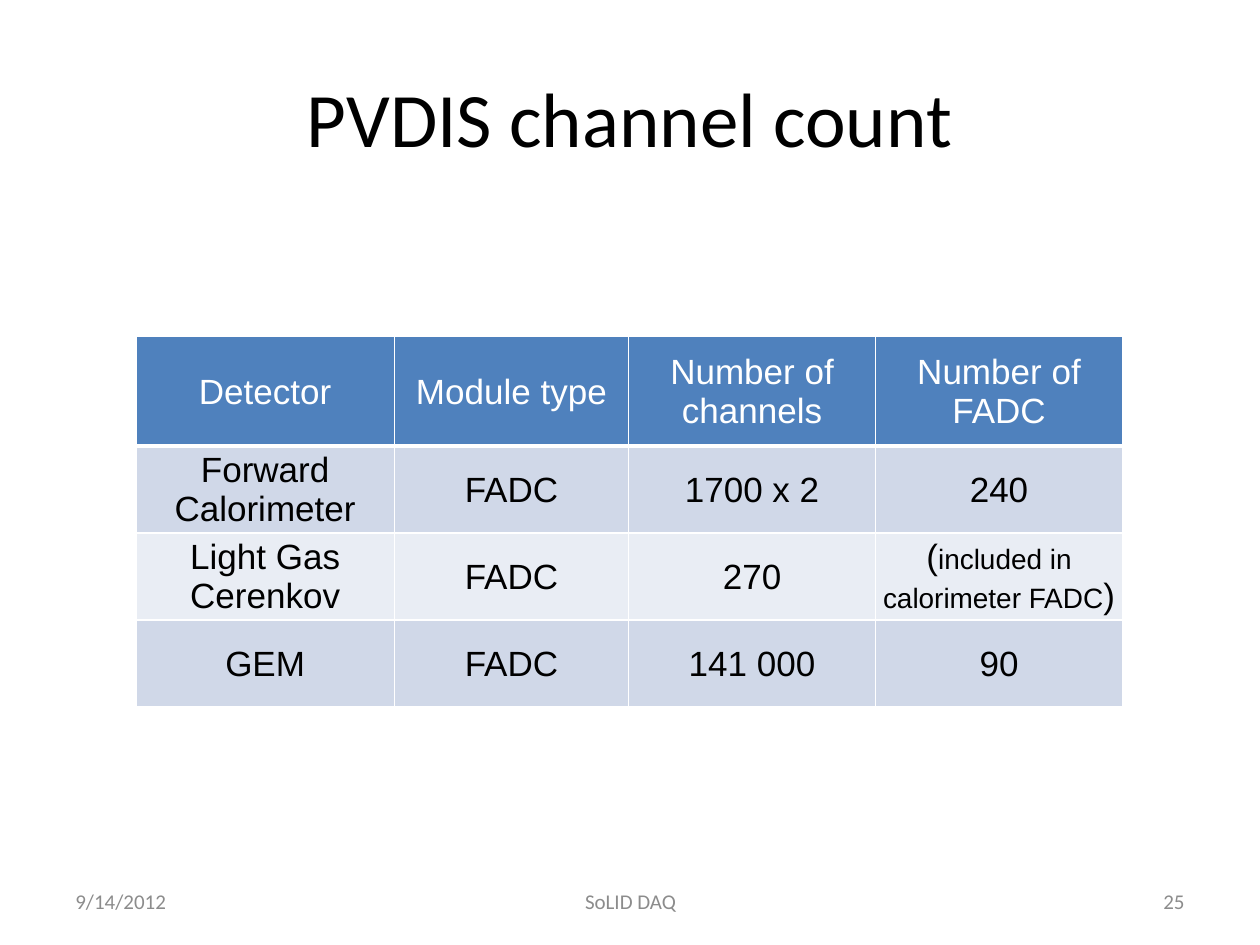
from lxml import etree
from pptx import Presentation
from pptx.dml.color import RGBColor
from pptx.enum import text
from pptx.oxml import ns
from pptx.util import Inches, Pt

# Content
TITLE = "PVDIS channel count"
# A cell is a string, or a list of (text, size) runs
ROWS = [
    ["Detector", "Module type", "Number of channels", "Number of FADC"],
    ["Forward Calorimeter", "FADC", "1700 x 2", "240"],
    ["Light Gas Cerenkov", "FADC", "270",
     [("(", 20), ("included in calorimeter FADC", 16), (")", 20)]],
    ["GEM", "FADC", "141 000", "90"],
]
FOOTER = [  # text, left, width, alignment
    ("9/14/2012", 0.5, 2.33, "LEFT"),
    ("SoLID DAQ", 3.42, 3.17, "CENTER"),
    ("25", 7.17, 2.33, "RIGHT"),
]

# Layout and colours
COL_WIDTHS = [2.05, 1.86, 1.96, 1.96]
ROW_HEIGHTS = [0.87, 0.69, 0.69, 0.69]
COLORS = {"header": "4F81BD", "odd": "D0D8E8", "even": "E9EDF4",
          "white": "FFFFFF", "black": "000000", "footer": "8C8C8C"}


def write(frame, content, size=20, font="Arial", color="black", align="CENTER"):
    """Fill the frame's first paragraph with one or more formatted runs."""
    frame.word_wrap = True
    paragraph = frame.paragraphs[0]
    paragraph.alignment = getattr(text.PP_ALIGN, align)
    runs = [(content, size)] if isinstance(content, str) else content
    for words, points in runs:
        run = paragraph.add_run()
        run.text = words
        run.font.size = Pt(points)
        run.font.name = font
        run.font.color.rgb = RGBColor.from_string(COLORS[color])


def add_label(slide, content, left, top, width, height, **style):
    box = slide.shapes.add_textbox(*map(Inches, (left, top, width, height)))
    box.text_frame.vertical_anchor = text.MSO_ANCHOR.MIDDLE
    write(box.text_frame, content, font="Calibri", **style)


def set_borders(cell, top, bottom):
    """Draw white borders; top and bottom widths are in points."""
    properties = cell._tc.get_or_add_tcPr()
    for side, points in (("L", 1), ("R", 1), ("T", top), ("B", bottom)):
        line = etree.SubElement(properties, ns.qn(f"a:ln{side}"), w=str(Pt(points)))
        fill = etree.SubElement(line, ns.qn("a:solidFill"))
        etree.SubElement(fill, ns.qn("a:srgbClr"), val=COLORS["white"])


def add_channel_table(slide):
    table = slide.shapes.add_table(
        len(ROWS), len(COL_WIDTHS), Inches(1.08), Inches(2.67),
        Inches(sum(COL_WIDTHS)), Inches(sum(ROW_HEIGHTS))).table
    for column, width in zip(table.columns, COL_WIDTHS):
        column.width = Inches(width)
    for r, (row, height) in enumerate(zip(ROWS, ROW_HEIGHTS)):
        table.rows[r].height = Inches(height)
        band = "header" if r == 0 else "odd" if r % 2 else "even"
        for c, content in enumerate(row):
            cell = table.cell(r, c)
            cell.margin_left = cell.margin_right = cell.margin_top = Inches(0.01)
            cell.margin_bottom = 0
            cell.vertical_anchor = text.MSO_ANCHOR.MIDDLE
            set_borders(cell, top=3 if r == 1 else 1, bottom=3 if r == 0 else 1)
            cell.fill.solid()
            cell.fill.fore_color.rgb = RGBColor.from_string(COLORS[band])
            write(cell.text_frame, content, color="white" if r == 0 else "black")


def main():
    deck = Presentation()
    deck.slide_width, deck.slide_height = Inches(10), Inches(7.5)
    slide = deck.slides.add_slide(deck.slide_layouts[6])

    # Title, table, footer
    add_label(slide, TITLE, 0.5, 0.3, 9, 1.25, size=44)
    add_channel_table(slide)
    for content, left, width, align in FOOTER:
        add_label(slide, content, left, 6.95, width, 0.4,
                  size=12, color="footer", align=align)

    deck.save("out.pptx")


if __name__ == "__main__":
    main()
